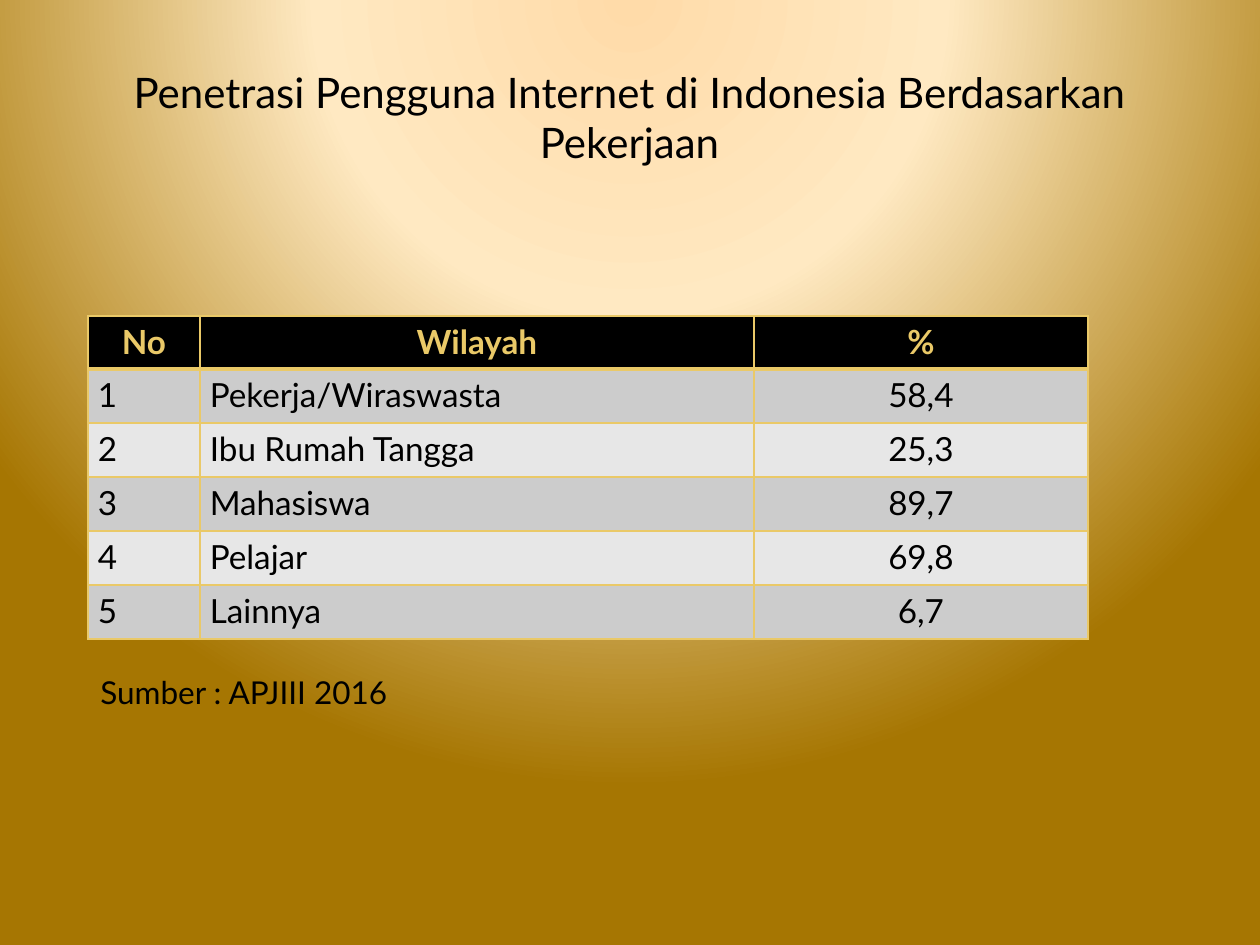
import pptx
import pptx.util
import pptx.dml.color
import pptx.enum.text
import pptx.oxml
import pptx.oxml.ns

EMU_PER_PX = 914400 / 126
ALIGN = pptx.enum.text.PP_ALIGN
ANCHOR = pptx.enum.text.MSO_ANCHOR

# Content
TITLE = "Penetrasi Pengguna Internet di Indonesia Berdasarkan Pekerjaan"
SOURCE = "Sumber : APJIII 2016"
HEADER = ("No", "Wilayah", "%")
ROWS = [
    ("1", "Pekerja/Wiraswasta", "58,4"),
    ("2", "Ibu Rumah Tangga", "25,3"),
    ("3", "Mahasiswa", "89,7"),
    ("4", "Pelajar", "69,8"),
    ("5", "Lainnya", "6,7"),
]

# Format
FONT = "Lato"
BLACK, GOLD = "000000", "EAC968"
BANDS = ("CCCCCC", "E7E7E7")
BACKGROUND_STOPS = [(0, "FFDBA9"), (40, "FFE9C2"), (100, "A67602")]
COLUMN_WIDTHS = (112, 554, 334)
COLUMN_ALIGN = (ALIGN.LEFT, ALIGN.LEFT, ALIGN.CENTER)
HEADER_HEIGHT, ROW_HEIGHT = 53, 54
TABLE_LEFT, TABLE_TOP = 88, 316
CELL_FORMAT = {"margin_left": 10, "margin_right": 10,
               "margin_top": 6, "margin_bottom": 6}


def px(length):
    return pptx.util.Emu(round(length * EMU_PER_PX))


def color(value):
    return pptx.dml.color.RGBColor.from_string(value)


def write(frame, text, size, ink=BLACK, bold=False, align=ALIGN.LEFT):
    para = frame.paragraphs[0]
    para.alignment = align
    span = para.add_run()
    span.text = text
    values = {"name": FONT, "size": pptx.util.Pt(size), "bold": bold}
    for name, value in values.items():
        setattr(span.font, name, value)
    span.font.color.rgb = color(ink)


def paint_background(page):
    page.background.fill.solid()
    holder = page.element.find(".//" + pptx.oxml.ns.qn("p:bgPr"))
    stops = "".join(
        f'<a:gs pos="{place * 1000}"><a:srgbClr val="{value}"/></a:gs>'
        for place, value in BACKGROUND_STOPS)
    gradient = pptx.oxml.parse_xml(
        f'<a:gradFill {pptx.oxml.ns.nsdecls("a")} rotWithShape="1">'
        f'<a:gsLst>{stops}</a:gsLst><a:path path="circle">'
        '<a:fillToRect l="50000" t="-80000" r="50000" b="180000"/>'
        '</a:path></a:gradFill>')
    holder.replace(holder[0], gradient)


def add_borders(cell, top, bottom):
    properties = cell._tc.get_or_add_tcPr()
    for side, points in {"L": 1, "R": 1, "T": top, "B": bottom}.items():
        properties.append(pptx.oxml.parse_xml(
            f'<a:ln{side} {pptx.oxml.ns.nsdecls("a")} w="{points * 12700}">'
            f'<a:solidFill><a:srgbClr val="{GOLD}"/></a:solidFill></a:ln{side}>'))


def add_user_table(page):
    heights = [HEADER_HEIGHT] + [ROW_HEIGHT] * len(ROWS)
    table = page.shapes.add_table(
        len(heights), len(HEADER), px(TABLE_LEFT), px(TABLE_TOP),
        px(sum(COLUMN_WIDTHS)), px(sum(heights))).table
    for column, width in zip(table.columns, COLUMN_WIDTHS):
        column.width = px(width)
    for row, height in zip(table.rows, heights):
        row.height = px(height)

    for r, texts in enumerate([HEADER] + ROWS):
        is_header = r == 0
        for c, text in enumerate(texts):
            cell = table.cell(r, c)
            for name, value in CELL_FORMAT.items():
                setattr(cell, name, px(value))
            add_borders(cell, top=3 if r == 1 else 1,
                        bottom=3 if is_header else 1)
            cell.fill.solid()
            cell.fill.fore_color.rgb = color(
                BLACK if is_header else BANDS[(r - 1) % 2])
            write(cell.text_frame, text, 19, GOLD if is_header else BLACK,
                  is_header, ALIGN.CENTER if is_header else COLUMN_ALIGN[c])


def main():
    deck = pptx.Presentation()
    deck.slide_width, deck.slide_height = px(1260), px(945)
    page = deck.slides.add_slide(deck.slide_layouts[5])
    paint_background(page)

    # Title
    title = page.shapes.title
    title.left, title.top, title.width, title.height = map(
        px, (78, 38, 1103, 158))
    title.text_frame.vertical_anchor = ANCHOR.MIDDLE
    write(title.text_frame, TITLE, 24, align=ALIGN.CENTER)

    # Table and its source line
    add_user_table(page)
    box = page.shapes.add_textbox(px(TABLE_LEFT), px(667), px(320), px(50))
    box.text_frame.word_wrap = False
    write(box.text_frame, SOURCE, 18)

    deck.save("out.pptx")


if __name__ == "__main__":
    main()
